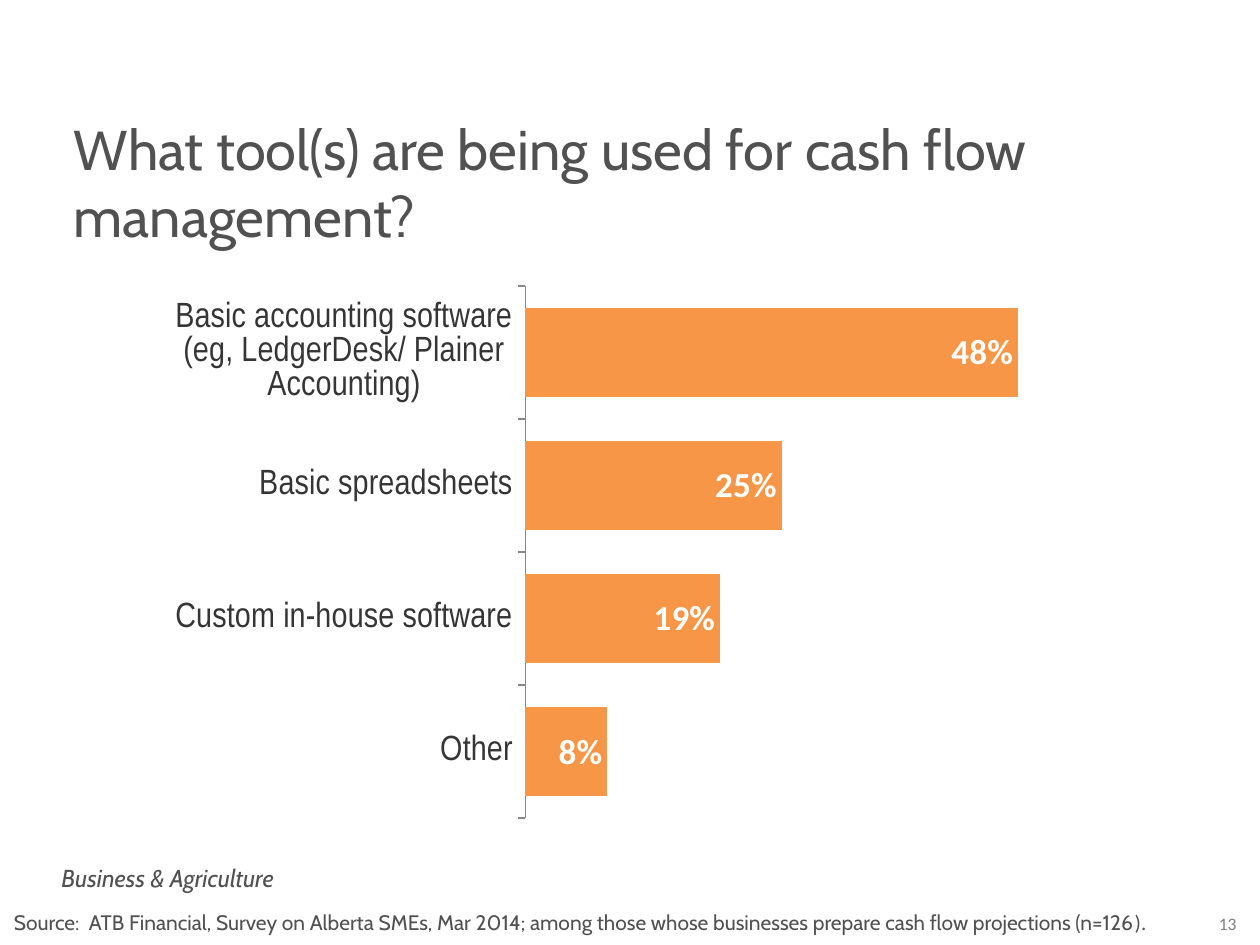
from lxml import etree
from pptx import Presentation
from pptx.chart.data import CategoryChartData
from pptx.dml.color import RGBColor
from pptx.enum import chart as chart_enum, text
from pptx.oxml.ns import qn
from pptx.util import Cm, Pt

GREY = RGBColor(0x50, 0x51, 0x50)
PAGE_GREY = RGBColor(0x80, 0x80, 0x80)
LABEL = RGBColor(0x35, 0x35, 0x35)
AXIS = RGBColor(0x86, 0x86, 0x86)
ORANGE = RGBColor(0xF7, 0x96, 0x46)
WHITE = RGBColor(0xFF, 0xFF, 0xFF)

TOOLS = {
    "Other": 0.08,
    "Custom in-house software": 0.19,
    "Basic spreadsheets": 0.25,
    "Basic accounting software (eg, LedgerDesk/ Plainer Accounting)": 0.48,
}


def style_font(font, name, size, color, bold=False, italic=False):
    """Set the face, size, colour and weight of a font."""
    font.name, font.size = name, Pt(size)
    font.bold, font.italic = bold, italic
    font.color.rgb = color


def add_text(slide, box, runs, size, color=GREY, italic=False,
             align=text.PP_ALIGN.LEFT):
    """Add a one-paragraph text box from (words, font name) runs."""
    frame = slide.shapes.add_textbox(*map(Cm, box)).text_frame
    frame.word_wrap = True
    paragraph = frame.paragraphs[0]
    paragraph.alignment = align
    for words, name in runs:
        run = paragraph.add_run()
        run.text = words
        style_font(run.font, name, size, color, italic=italic)


def set_plot_area(chart, x, y, width, height):
    """Fix the inner plot area as fractions of the chart box."""
    plot_area = chart.element.find(".//" + qn("c:plotArea"))
    layout = plot_area.find(qn("c:layout"))
    if layout is None:
        layout = etree.Element(qn("c:layout"))
        plot_area.insert(0, layout)
    manual = etree.SubElement(layout, qn("c:manualLayout"))
    settings = {"layoutTarget": "inner", "xMode": "edge", "yMode": "edge",
                "x": x, "y": y, "w": width, "h": height}
    for tag, value in settings.items():
        etree.SubElement(manual, qn("c:" + tag)).set("val", str(value))


def add_tools_chart(slide, box):
    """Add the bar chart of cash flow tools in the given box."""
    data = CategoryChartData(number_format="0%")
    data.categories = list(TOOLS)
    data.add_series("Series 1", list(TOOLS.values()))
    chart = slide.shapes.add_chart(
        chart_enum.XL_CHART_TYPE.BAR_STACKED, *map(Cm, box), data).chart
    chart.has_legend = False
    chart.has_title = False
    style_font(chart.font, "Cabin", 14, LABEL, bold=True)
    set_plot_area(chart, 0.373, 0.052, 0.627, 0.92)

    categories = chart.category_axis
    categories.major_tick_mark = chart_enum.XL_TICK_MARK.OUTSIDE
    categories.has_major_gridlines = False
    categories.format.line.color.rgb = AXIS
    style_font(categories.tick_labels.font, "Arial Narrow", 20, LABEL)

    values = chart.value_axis
    values.minimum_scale, values.maximum_scale = 0, 0.6
    values.has_major_gridlines = False
    values.visible = False

    plot = chart.plots[0]
    plot.gap_width, plot.overlap = 50, 100
    plot.vary_by_categories = False
    series = plot.series[0]
    series.format.fill.solid()
    series.format.fill.fore_color.rgb = ORANGE
    labels = series.data_labels
    labels.show_value = True
    labels.number_format, labels.number_format_is_linked = "0%", False
    labels.position = chart_enum.XL_LABEL_POSITION.INSIDE_END
    style_font(labels.font, "Calibri", 20, WHITE, bold=True)


def add_footer(slide, left, top):
    """Add the section name, source line and page number from a corner."""
    add_text(slide, (left + 0.96, top, 7.14, 0.86),
             [("Business & Agriculture", "Cabin")], 14, italic=True)
    source = ("Source:  ATB Financial, Survey on Alberta SMEs, Mar 2014; among "
              "those whose businesses prepare cash flow projections (n=126")
    add_text(slide, (left, top + 0.94, 23.65, 0.76),
             [(source, "Cabin"), (").", "Calibri")], 12)
    add_text(slide, (left + 24.1, top + 1.02, 1.24, 0.69),
             [("13", "Calibri")], 10, PAGE_GREY, align=text.PP_ALIGN.CENTER)


def main():
    """Build and save the slide."""
    presentation = Presentation()
    presentation.slide_width, presentation.slide_height = Cm(25.4), Cm(19.05)
    slide = presentation.slides.add_slide(presentation.slide_layouts[6])
    title = "What tool(s) are being used for cash flow management?"
    add_text(slide, (1.24, 2.18, 22.43, 3), [(title, "Cabin")], 32)
    add_tools_chart(slide, (3.2, 5.16, 19.81, 11.66))
    add_footer(slide, 0.03, 17.27)
    presentation.save("out.pptx")


if __name__ == "__main__":
    main()
